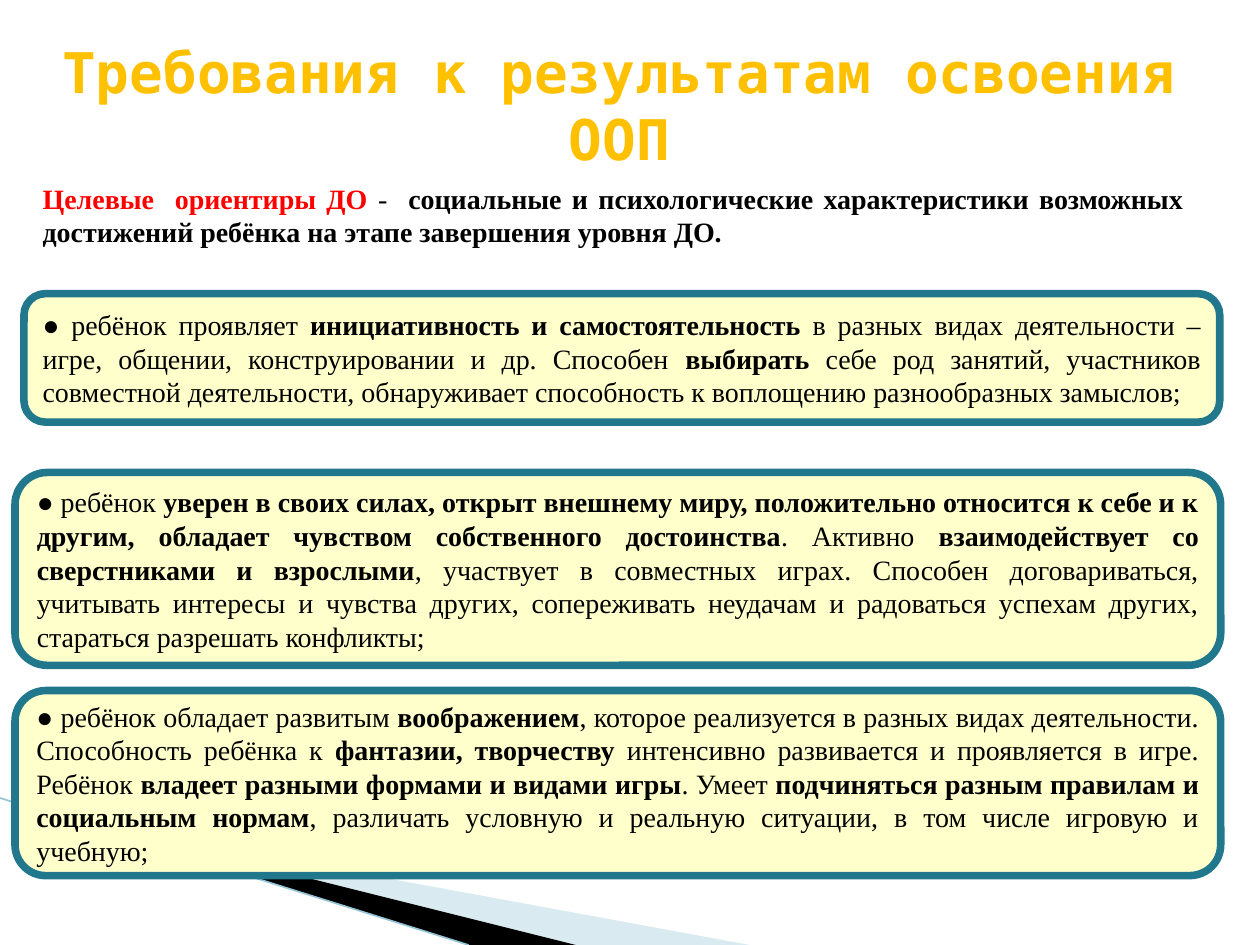
from dataclasses import dataclass

import lxml.etree
import pptx
import pptx.dml.color
import pptx.enum.shapes
import pptx.enum.text
import pptx.oxml.ns
import pptx.util

Pt = pptx.util.Pt
Align = pptx.enum.text.PP_ALIGN
Anchor = pptx.enum.text.MSO_ANCHOR
qn = pptx.oxml.ns.qn

BODY_FONT = "Times New Roman"
BLACK = "000000"


@dataclass
class TextRun:
    text: str
    bold: bool = False
    color: str = BLACK
    size: float = 16
    font: str = BODY_FONT


@dataclass
class Box:
    left: float
    top: float
    width: float
    height: float

    def lengths(self) -> list:
        return [Pt(value) for value in (self.left, self.top, self.width, self.height)]


@dataclass
class Card:
    box: Box
    runs: list[TextRun]


@dataclass
class Band:
    points: list[tuple[float, float]]
    color: str
    opacity: int = 100


def rgb(color: str) -> pptx.dml.color.RGBColor:
    return pptx.dml.color.RGBColor.from_string(color)


def write_runs(shape, runs: list[TextRun], alignment) -> None:
    shape.text_frame.word_wrap = True
    paragraph = shape.text_frame.paragraphs[0]
    paragraph.alignment = alignment
    for item in runs:
        run = paragraph.add_run()
        run.text = item.text
        run.font.name = item.font
        run.font.size = Pt(item.size)
        run.font.bold = item.bold
        run.font.color.rgb = rgb(item.color)


def add_text(slide, box: Box, runs: list[TextRun], alignment):
    shape = slide.shapes.add_textbox(*box.lengths())
    write_runs(shape, runs, alignment)
    return shape


def outline_text(shape, color: str, width: float) -> None:
    for run in shape.text_frame.paragraphs[0].runs:
        line = lxml.etree.Element(qn("a:ln"), w=str(Pt(width)))
        fill = lxml.etree.SubElement(line, qn("a:solidFill"))
        lxml.etree.SubElement(fill, qn("a:srgbClr"), val=color)
        run.font._element.insert(0, line)


def add_card(slide, card: Card) -> None:
    shape = slide.shapes.add_shape(
        pptx.enum.shapes.MSO_SHAPE.ROUNDED_RECTANGLE, *card.box.lengths()
    )
    shape.shadow.inherit = False
    shape.fill.solid()
    shape.fill.fore_color.rgb = rgb("FFFFCC")
    shape.line.color.rgb = rgb("21788D")
    shape.line.width = Pt(4.33)
    shape.text_frame.vertical_anchor = Anchor.MIDDLE
    write_runs(shape, card.runs, Align.JUSTIFY)


def add_band(slide, band: Band) -> None:
    start, *rest = [(Pt(x), Pt(y)) for x, y in band.points]
    builder = slide.shapes.build_freeform(*start)
    builder.add_line_segments(rest, close=True)
    shape = builder.convert_to_shape()
    shape.shadow.inherit = False
    shape.line.fill.background()
    shape.fill.solid()
    shape.fill.fore_color.rgb = rgb(band.color)
    if band.opacity < 100:
        color = shape._element.spPr.find(f"{qn('a:solidFill')}/{qn('a:srgbClr')}")
        lxml.etree.SubElement(color, qn("a:alpha"), val=str(band.opacity * 1000))


def add_edge(slide, start: tuple[float, float], end: tuple[float, float]) -> None:
    connector = slide.shapes.add_connector(
        pptx.enum.shapes.MSO_CONNECTOR.STRAIGHT, *map(Pt, start + end)
    )
    connector.line.color.rgb = rgb("97C5D8")
    connector.line.width = Pt(0.95)
    lxml.etree.SubElement(connector._element.spPr, qn("a:effectLst"))


BANDS = [
    Band([(39.6, 468.5), (428.4, 540), (328.3, 540)], "A0CBDC", 40),
    Band([(38.2, 467.3), (329, 540), (267.8, 540), (38.9, 468)], BLACK),
]

CARDS = [
    Card(Box(13.7, 167.8, 683.3, 73.4), [
        TextRun("● ребёнок проявляет "),
        TextRun("инициативность и самостоятельность ", True),
        TextRun("в разных видах деятельности – игре, общении, конструировании и др. Способен "),
        TextRun("выбирать", True),
        TextRun(" себе род занятий, участников совместной деятельности, "
                "обнаруживает способность к воплощению разнообразных замыслов;"),
    ]),
    Card(Box(8.6, 270, 689, 110.2), [
        TextRun("● ребёнок "),
        TextRun("уверен в своих силах, открыт внешнему миру, положительно относится "
                "к себе и к другим, обладает чувством собственного достоинства", True),
        TextRun(". Активно "),
        TextRun("взаимодействует со сверстниками и взрослыми", True),
        TextRun(", участвует в совместных играх. Способен договариваться, учитывать "
                "интересы и чувства других, сопереживать неудачам и радоваться успехам "
                "других, стараться разрешать конфликты;"),
    ]),
    Card(Box(8.6, 394.6, 689, 105.8), [
        TextRun("● ребёнок обладает развитым "),
        TextRun("воображением", True),
        TextRun(", которое реализуется в разных видах деятельности. Способность ребёнка к "),
        TextRun("фантазии, творчеству", True),
        TextRun(" интенсивно развивается и проявляется в игре. Ребёнок "),
        TextRun("владеет разными формами и видами игры", True),
        TextRun(". Умеет "),
        TextRun("подчиняться разным правилам и социальным нормам", True),
        TextRun(", различать условную и реальную ситуации, в том числе игровую и учебную;"),
    ]),
]

TITLE = TextRun("Требования к результатам освоения ООП", True, "FFC000", 32, "DejaVu Sans Mono")

INTRODUCTION = [
    TextRun("Целевые  ориентиры ДО ", True, "FF0000"),
    TextRun("-  "),
    TextRun("социальные и психологические характеристики возможных "
            "достижений ребёнка на этапе завершения уровня ДО.", True),
]


def main() -> None:
    presentation = pptx.Presentation()
    presentation.slide_width, presentation.slide_height = Pt(720), Pt(540)
    slide = presentation.slides.add_slide(presentation.slide_layouts[6])

    for band in BANDS:
        add_band(slide, band)
    add_edge(slide, (0, 456), (267.8, 540))

    title = add_text(slide, Box(12.2, 18, 683.3, 46), [TITLE], Align.CENTER)
    outline_text(title, "F9000C", 1.42)
    add_text(slide, Box(17.3, 100.1, 666, 46), INTRODUCTION, Align.JUSTIFY)
    for card in CARDS:
        add_card(slide, card)

    presentation.save("out.pptx")


if __name__ == "__main__":
    main()
